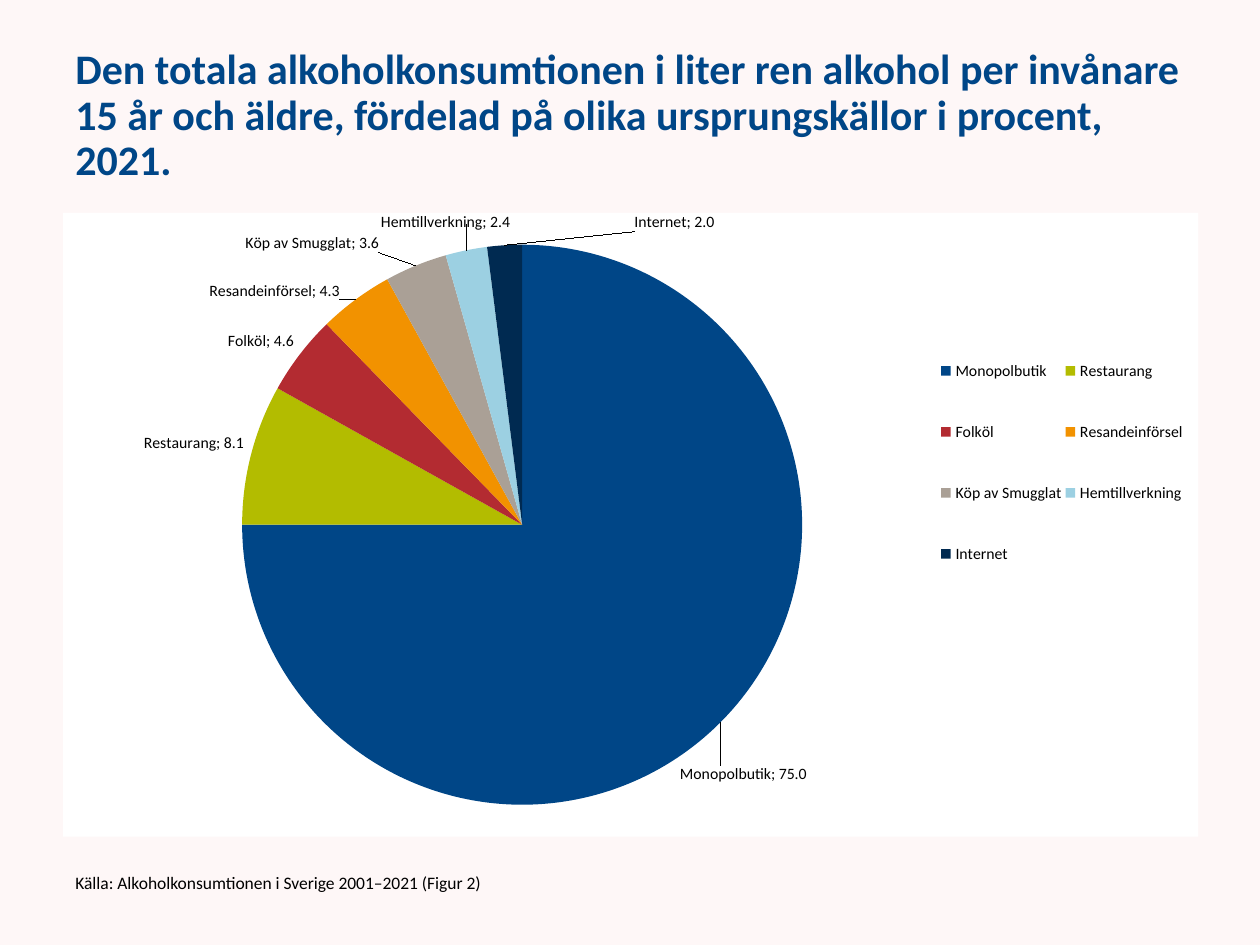
from dataclasses import dataclass

from lxml import etree
from pptx import Presentation, util as u
from pptx.chart import data as chart_data
from pptx.dml import color
from pptx.enum import chart as ec, text as et
from pptx.oxml import ns, parse_xml


@dataclass(frozen=True)
class Theme:
    font: str = "Calibri"
    background: str = "FEF7F7"
    panel: str = "FFFFFF"
    heading: str = "004687"
    ink: str = "000000"
    title_size: int = 24
    source_size: int = 10
    chart_size: int = 10
    label_size: int = 9


THEME = Theme()

# Source of alcohol, share in percent, slice colour, label shift (share of chart)
SOURCES = [
    ("Monopolbutik", 75.0, "004687", (-0.04, 0.06)),
    ("Restaurang", 8.1, "B3BC00", None),
    ("Folköl", 4.6, "B32B31", None),
    ("Resandeinförsel", 4.3, "F29200", (-0.01, 0.01)),
    ("Köp av Smugglat", 3.6, "AAA096", (-0.03, -0.01)),
    ("Hemtillverkning", 2.4, "9CD0E2", (0.04, -0.03)),
    ("Internet", 2.0, "002A51", (0.15, -0.01)),
]


def rgb(value):
    return color.RGBColor.from_string(value)


def style_font(font, size, colour=THEME.ink, bold=False):
    font.name = THEME.font
    font.size = u.Pt(size)
    font.bold = bold
    font.color.rgb = rgb(colour)


def add_text(slide, box, words, size, colour, bold=False):
    textbox = slide.shapes.add_textbox(*(u.Inches(n) for n in box))
    frame = textbox.text_frame
    frame.word_wrap = True
    frame.vertical_anchor = et.MSO_ANCHOR.MIDDLE
    paragraph = frame.paragraphs[0]
    paragraph.line_spacing = 0.9
    run = paragraph.add_run()
    run.text = words
    style_font(run.font, size, colour, bold)


def chart_xml(body):
    """Parse one chart element, with the chart and drawing prefixes declared."""
    tag, rest = body[:-1].split(">", 1) if ">" in body[:-1] else (body[:-2], None)
    head = f'{tag} {ns.nsdecls("c", "a")}'
    return parse_xml(f"{head}>{rest}>" if rest is not None else f"{head}/>")


def manual_layout(**values):
    parts = "".join(f'<c:{k} val="{v}"/>' for k, v in values.items())
    return chart_xml(f"<c:layout><c:manualLayout>{parts}</c:manualLayout></c:layout>")


def style_label(point, shift):
    label = point.data_label
    style_font(label.font, THEME.label_size)
    label.position = ec.XL_LABEL_POSITION.OUTSIDE_END


def finish_labels(series):
    """Show category and value on every label, and move the crowded ones."""
    labels = series.data_labels
    style_font(labels.font, THEME.label_size)
    labels.number_format = "0.0"
    labels.number_format_is_linked = False
    labels.position = ec.XL_LABEL_POSITION.OUTSIDE_END
    labels.show_value = labels.show_category_name = True
    root = labels._element
    for entry, (_, _, _, shift) in zip(root.findall(ns.qn("c:dLbl")), SOURCES):
        entry.find(ns.qn("c:showCatName")).set("val", "1")
        index = entry.find(ns.qn("c:idx"))
        index.addnext(chart_xml('<c:numFmt formatCode="0.0" sourceLinked="0"/>'))
        if shift:
            index.addnext(manual_layout(x=shift[0], y=shift[1]))
    for owner in [root, *root.findall(ns.qn("c:dLbl"))]:
        separator = etree.Element(ns.qn("c:separator"))
        separator.text = "; "
        flags = [e for e in owner if e.tag.rpartition("}")[2].startswith("show")
                 and e.tag != ns.qn("c:showLeaderLines")]
        flags[-1].addnext(separator)
    for old in root.findall(ns.qn("c:showLeaderLines")):
        root.remove(old)
    root.find(ns.qn("c:separator")).addnext(chart_xml('<c:showLeaderLines val="1"/>'))


def add_pie(slide, box):
    shares = chart_data.CategoryChartData(number_format="0.0")
    shares.categories = [source[0] for source in SOURCES]
    shares.add_series("Series 1", [source[1] for source in SOURCES])
    pie = slide.shapes.add_chart(
        ec.XL_CHART_TYPE.PIE, *(u.Inches(n) for n in box), shares).chart
    pie.has_title = False
    style_font(pie.font, THEME.chart_size)

    # Slices and their labels
    pie.plots[0].vary_by_categories = True
    series = pie.plots[0].series[0]
    for i, (_, _, colour, shift) in enumerate(SOURCES):
        point = series.points[i]
        point.format.fill.solid()
        point.format.fill.fore_color.rgb = rgb(colour)
        point.format.line.fill.background()
        style_label(point, shift)
    finish_labels(series)

    # Legend in two columns
    pie.has_legend = True
    legend = pie.legend
    legend.position = ec.XL_LEGEND_POSITION.RIGHT
    legend.include_in_layout = False
    style_font(legend.font, THEME.label_size)
    for old in legend._element.findall(ns.qn("c:layout")):
        legend._element.remove(old)
    legend._element.find(ns.qn("c:legendPos")).addnext(manual_layout(
        xMode="edge", yMode="edge", x=0.77, y=0.17, w=0.22, h=0.46))

    # Plot area and white panel
    plot_area = pie._chartSpace.chart.plotArea
    for old in plot_area.findall(ns.qn("c:layout")):
        plot_area.remove(old)
    plot_area.insert(0, manual_layout(
        layoutTarget="inner", xMode="edge", yMode="edge",
        x=0.135, y=0.051, w=0.539, h=0.898))
    pie._chartSpace.chart.addnext(chart_xml(
        f'<c:spPr><a:solidFill><a:srgbClr val="{THEME.panel}"/></a:solidFill>'
        "<a:ln><a:noFill/></a:ln></c:spPr>"))


def main():
    deck = Presentation()
    deck.slide_width, deck.slide_height = u.Inches(10), u.Inches(7.5)
    slide = deck.slides.add_slide(deck.slide_layouts[6])
    slide.background.fill.solid()
    slide.background.fill.fore_color.rgb = rgb(THEME.background)

    # Heading
    add_text(slide, (0.5, 0.3, 9, 1.25),
             "Den totala alkoholkonsumtionen i liter ren alkohol per invånare "
             "15 år och äldre, fördelad på olika ursprungskällor i procent, 2021.",
             THEME.title_size, THEME.heading, bold=True)
    # Shares by source
    add_pie(slide, (0.5, 1.69, 9.01, 4.95))
    # Reference
    add_text(slide, (0.5, 6.83, 4.5, 0.37),
             "Källa: Alkoholkonsumtionen i Sverige 2001–2021 (Figur 2)",
             THEME.source_size, THEME.ink)

    deck.save("out.pptx")


if __name__ == "__main__":
    main()
